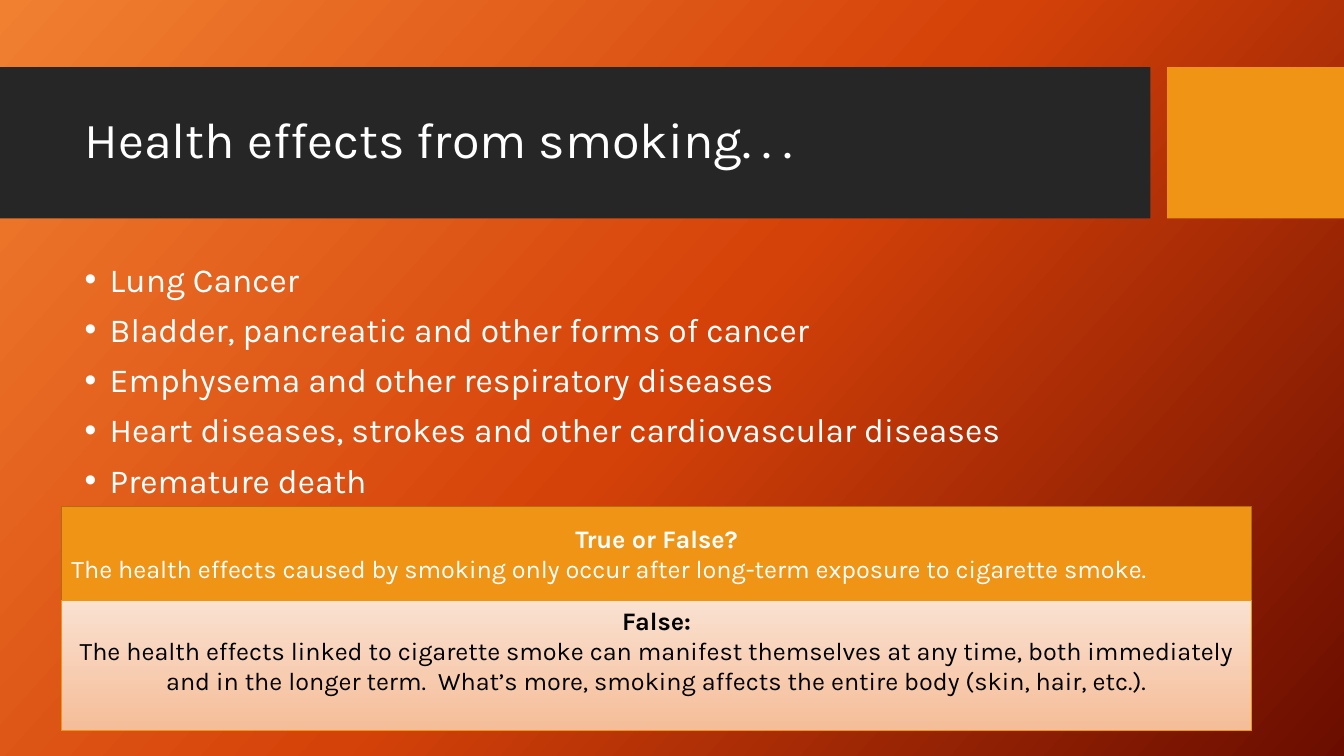
"""Builds the slide on the health effects of smoking."""
import copy
from dataclasses import dataclass

import pptx
import pptx.dml.color
import pptx.enum.shapes
import pptx.enum.text
import pptx.oxml.ns
import pptx.util
from lxml import etree

Pt = pptx.util.Pt
Align = pptx.enum.text.PP_ALIGN
Anchor = pptx.enum.text.MSO_ANCHOR
qn = pptx.oxml.ns.qn


def rgb(value):
    """Return the colour for a hex string."""
    return pptx.dml.color.RGBColor.from_string(value)


@dataclass(frozen=True)
class Theme:
    """Colours, font and type sizes of the slide."""
    font: str = "Karla"
    title: int = 36
    body: int = 24
    panel: int = 18
    white: str = "FFFFFF"
    black: str = "000000"
    dark: str = "262626"
    orange: str = "F09415"
    outline: str = "B26D10"
    backdrop: tuple = ("F18031", "D54209", "6A0D00")
    peach: tuple = ("FAE1D1", "F5BD98")


class SlideBuilder:
    """Holds the theme and the current page, and draws each kind of element."""

    def __init__(self, theme, page):
        """Keep the theme and the page."""
        self.theme = theme
        self.page = page

    def gradient(self, fill, owner, colours, angle):
        """Fill with evenly spaced colours, the angle being clockwise."""
        fill.gradient()
        fill.gradient_angle = 360 - angle
        stops = next(owner.iter(qn("a:gsLst")))
        for _ in colours[2:]:
            stops.append(copy.deepcopy(stops[0]))
        for index, (stop, colour) in enumerate(zip(fill.gradient_stops, colours)):
            stop.position = index / (len(colours) - 1)
            stop.color.rgb = rgb(colour)

    def backdrop(self, colours, angle):
        """Give the page a gradient background."""
        self.gradient(self.page.background.fill, self.page._element, colours, angle)

    def rectangle(self, place, fill, line=None, width=1):
        """Draw a rectangle with a plain colour or a downward gradient."""
        kind = pptx.enum.shapes.MSO_SHAPE.RECTANGLE
        box = self.page.shapes.add_shape(kind, *map(Pt, place))
        box.shadow.inherit = False
        if isinstance(fill, tuple):
            self.gradient(box.fill, box._element, fill, 90)
        else:
            box.fill.solid()
            box.fill.fore_color.rgb = rgb(fill)
        if line:
            box.line.color.rgb = rgb(line)
            box.line.width = Pt(width)
        else:
            box.line.fill.background()
        return box

    def paragraphs(self, box, texts, size, colour, anchor, bullet=None, formats=()):
        """Fill a box with paragraphs, each a text, its weight and its alignment."""
        frame = box.text_frame
        frame.word_wrap = True
        frame.vertical_anchor = anchor
        for index, (text, bold, align) in enumerate(texts):
            para = frame.add_paragraph() if index else frame.paragraphs[0]
            if bullet:
                self.bullet(para, bullet)
            style = {"alignment": align, **dict(formats)}
            if not index:
                style["space_before"] = Pt(0)
            for name, value in style.items():
                setattr(para, name, value)
            span = para.add_run()
            span.text = text
            font = {"name": self.theme.font, "size": Pt(size), "bold": bold}
            for name, value in font.items():
                setattr(span.font, name, value)
            span.font.color.rgb = rgb(colour)

    def bullet(self, para, mark):
        """Hang a bullet mark in front of a paragraph."""
        properties = para._p.get_or_add_pPr()
        properties.set("marL", str(Pt(18)))
        properties.set("indent", str(-Pt(18)))
        etree.SubElement(properties, qn("a:buFont")).set("typeface", "Arial")
        etree.SubElement(properties, qn("a:buChar")).set("char", mark)

    def text(self, place, lines, size, anchor, bullet=None, gap=0):
        """Add a text box of left-aligned white lines."""
        box = self.page.shapes.add_textbox(*map(Pt, place))
        formats = {"line_spacing": 0.9, "space_before": Pt(gap)}
        texts = [(line, False, Align.LEFT) for line in lines]
        self.paragraphs(box, texts, size, self.theme.white, anchor, bullet, formats)

    def panel(self, place, fill, line, width, colour, heading, answer, align, foot=3.6):
        """Add a filled panel with a bold centred heading over a statement."""
        box = self.rectangle(place, fill, line, width)
        box.text_frame.margin_bottom = Pt(foot)
        texts = [(heading, True, Align.CENTER), (answer, False, align)]
        self.paragraphs(box, texts, self.theme.panel, colour, Anchor.MIDDLE)


def main():
    """Build the deck and save it."""
    deck = pptx.Presentation()
    deck.slide_width, deck.slide_height = Pt(960), Pt(540)
    theme = Theme()
    slide = SlideBuilder(theme, deck.slides.add_slide(deck.slide_layouts[6]))

    slide.backdrop(theme.backdrop, 42)
    slide.rectangle((0, 48, 821.7, 108), theme.dark)
    slide.rectangle((833.7, 48, 126.3, 108), theme.orange)

    left, width = 53.3, 756.7
    slide.text((left, 59, width, 85), ["Health effects from smoking. . ."],
               theme.title, Anchor.MIDDLE)
    effects = [
        "Lung Cancer",
        "Bladder, pancreatic and other forms of cancer",
        "Emphysema and other respiratory diseases",
        "Heart diseases, strokes and other cardiovascular diseases",
        "Premature death",
    ]
    slide.text((left, 184.3, width, 283.7), effects, theme.body, Anchor.TOP, "•", 10)

    left, width, top, height = 44, 850, 362, 67
    slide.panel(
        (left, top, width, height), theme.orange, theme.outline, 1, theme.white,
        "True or False?",
        "The health effects caused by smoking only occur after long-term exposure "
        "to cigarette smoke.", Align.LEFT)
    slide.panel(
        (left, top + height, width, 93), theme.peach, theme.orange, 0.75, theme.black,
        "False:",
        "The health effects linked to cigarette smoke can manifest themselves at any "
        "time, both immediately and in the longer term.  What’s more, smoking affects "
        "the entire body (skin, hair, etc.).", Align.CENTER, foot=25)

    deck.save("out.pptx")


if __name__ == "__main__":
    main()
